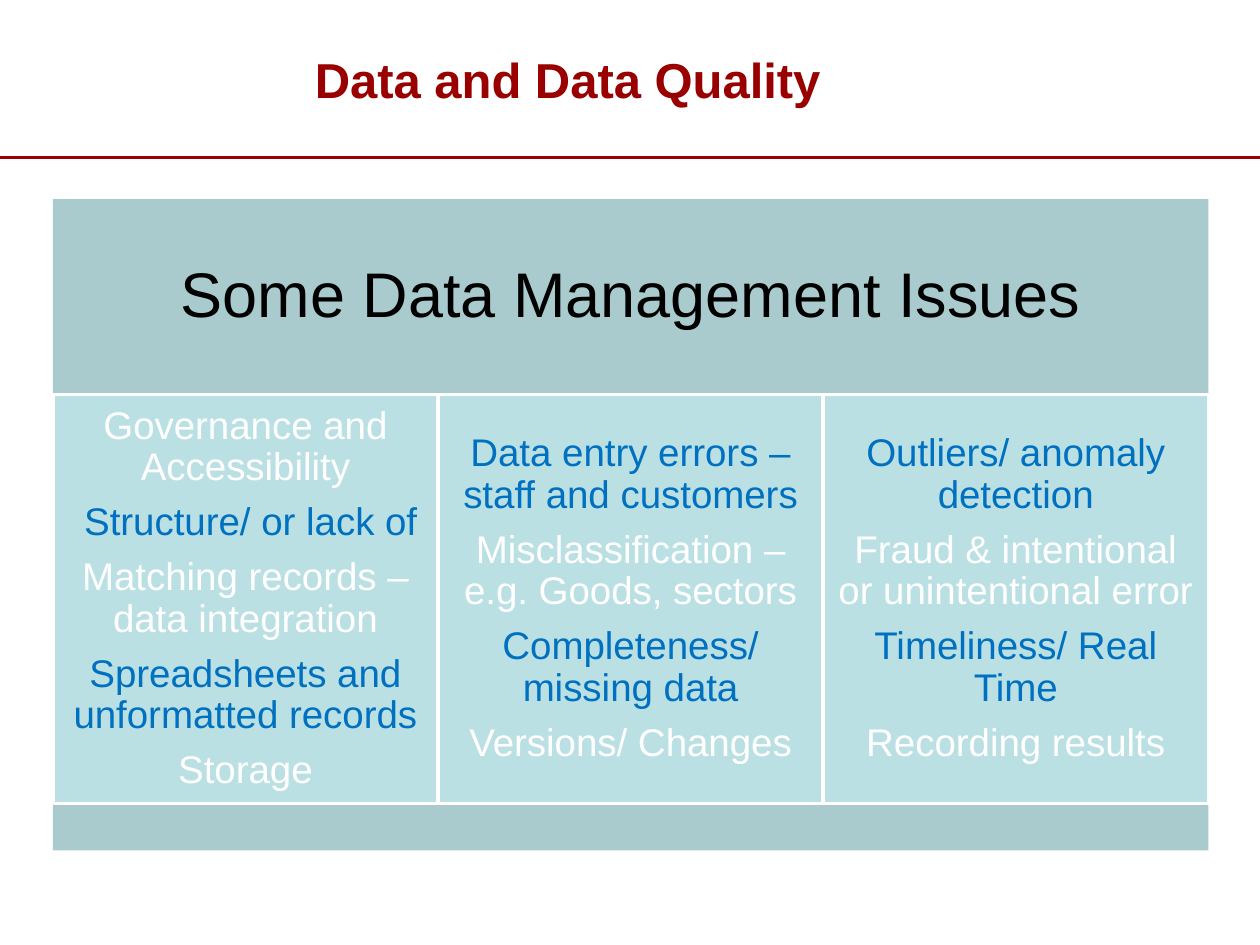
import pptx
import pptx.util
import pptx.dml.color
import pptx.enum.shapes
import pptx.enum.text
import pptx.oxml.ns
from lxml import etree

Inches = pptx.util.Inches
Pt = pptx.util.Pt
RGBColor = pptx.dml.color.RGBColor
Align = pptx.enum.text.PP_ALIGN
Anchor = pptx.enum.text.MSO_ANCHOR

DARK_RED = RGBColor(0x99, 0x00, 0x00)
BAND = RGBColor(0xAA, 0xCB, 0xCE)
PANEL = RGBColor(0xBB, 0xE0, 0xE3)
BLUE = RGBColor(0x00, 0x70, 0xC0)
WHITE = RGBColor(0xFF, 0xFF, 0xFF)
BLACK = RGBColor(0x00, 0x00, 0x00)

# Each column: its items and the two colours they alternate between
COLUMNS = [
    (["Governance and Accessibility", " Structure/ or lack of",
      "Matching records – data integration",
      "Spreadsheets and unformatted records", "Storage"], (WHITE, BLUE)),
    (["Data entry errors – staff and customers",
      "Misclassification – e.g. Goods, sectors",
      "Completeness/ missing data", "Versions/ Changes"], (BLUE, WHITE)),
    (["Outliers/ anomaly detection",
      "Fraud & intentional or unintentional error",
      "Timeliness/ Real Time", "Recording results"], (BLUE, WHITE)),
]


def format_para(para, size, colour, bold=False):
    para.alignment = Align.CENTER
    for span in para.runs:
        span.font.name = "Arial"
        span.font.size = Pt(size)
        span.font.bold = bold
        span.font.color.rgb = colour


def add_panel(page, left, top, width, height, fill, border=None):
    panel = page.shapes.add_shape(
        pptx.enum.shapes.MSO_SHAPE.RECTANGLE,
        Inches(left), Inches(top), Inches(width), Inches(height))
    panel.shadow.inherit = False
    panel.fill.solid()
    panel.fill.fore_color.rgb = fill
    if border is None:
        panel.line.fill.background()
    else:
        panel.line.color.rgb = border
        panel.line.width = Pt(2)
    return panel


def fill_text(panel, items, size, colours, inset):
    frame = panel.text_frame
    frame.word_wrap = True
    frame.vertical_anchor = Anchor.MIDDLE
    frame.margin_left = frame.margin_right = Inches(inset)
    frame.margin_top = frame.margin_bottom = Inches(inset)
    frame.text = "\n".join(items)
    for index, para in enumerate(frame.paragraphs):
        para.line_spacing = 0.9
        para.space_after = Pt(0.35 * size)
        format_para(para, size, colours[index % len(colours)])


def add_heading(page, left, top, width, height):
    # Rule across the page
    rule = page.shapes.add_connector(
        pptx.enum.shapes.MSO_CONNECTOR.STRAIGHT,
        Inches(0), Inches(1.25), Inches(10), Inches(1.25))
    rule.line.color.rgb = DARK_RED
    rule.line.width = Pt(2.25)
    etree.SubElement(rule.element.spPr, pptx.oxml.ns.qn("a:effectLst"))

    # Title
    title = page.shapes.title
    title.left, title.top = Inches(left), Inches(top)
    title.width, title.height = Inches(width), Inches(height)
    frame = title.text_frame
    frame.text = "Data and Data Quality"
    frame.auto_size = pptx.enum.text.MSO_AUTO_SIZE.NONE
    frame.vertical_anchor = Anchor.BOTTOM
    format_para(frame.paragraphs[0], 28, DARK_RED, bold=True)


def add_issues(page, left, top, width):
    header_height, column_height, footer_height = 1.55, 3.25, 0.36

    # Header band
    header = add_panel(page, left, top, width, header_height, BAND)
    fill_text(header, ["Some Data Management Issues"], 36, [BLACK], 0.15)

    # Columns of issues
    column_top = top + header_height
    column_width = width / len(COLUMNS)
    for index, (items, colours) in enumerate(COLUMNS):
        column = add_panel(page, left + index * column_width, column_top,
                           column_width, column_height, PANEL, WHITE)
        fill_text(column, items, 22, colours, 0.09)

    # Footer band
    add_panel(page, left, column_top + column_height + 0.01, width,
              footer_height, BAND)


def main():
    deck = pptx.Presentation()
    deck.slide_width, deck.slide_height = Inches(10), Inches(7.5)
    page = deck.slides.add_slide(deck.slide_layouts.get_by_name("Title Only"))
    add_heading(page, 0.42, 0.33, 8.17, 0.58)
    add_issues(page, 0.42, 1.58, 9.17)
    deck.save("out.pptx")


if __name__ == "__main__":
    main()
